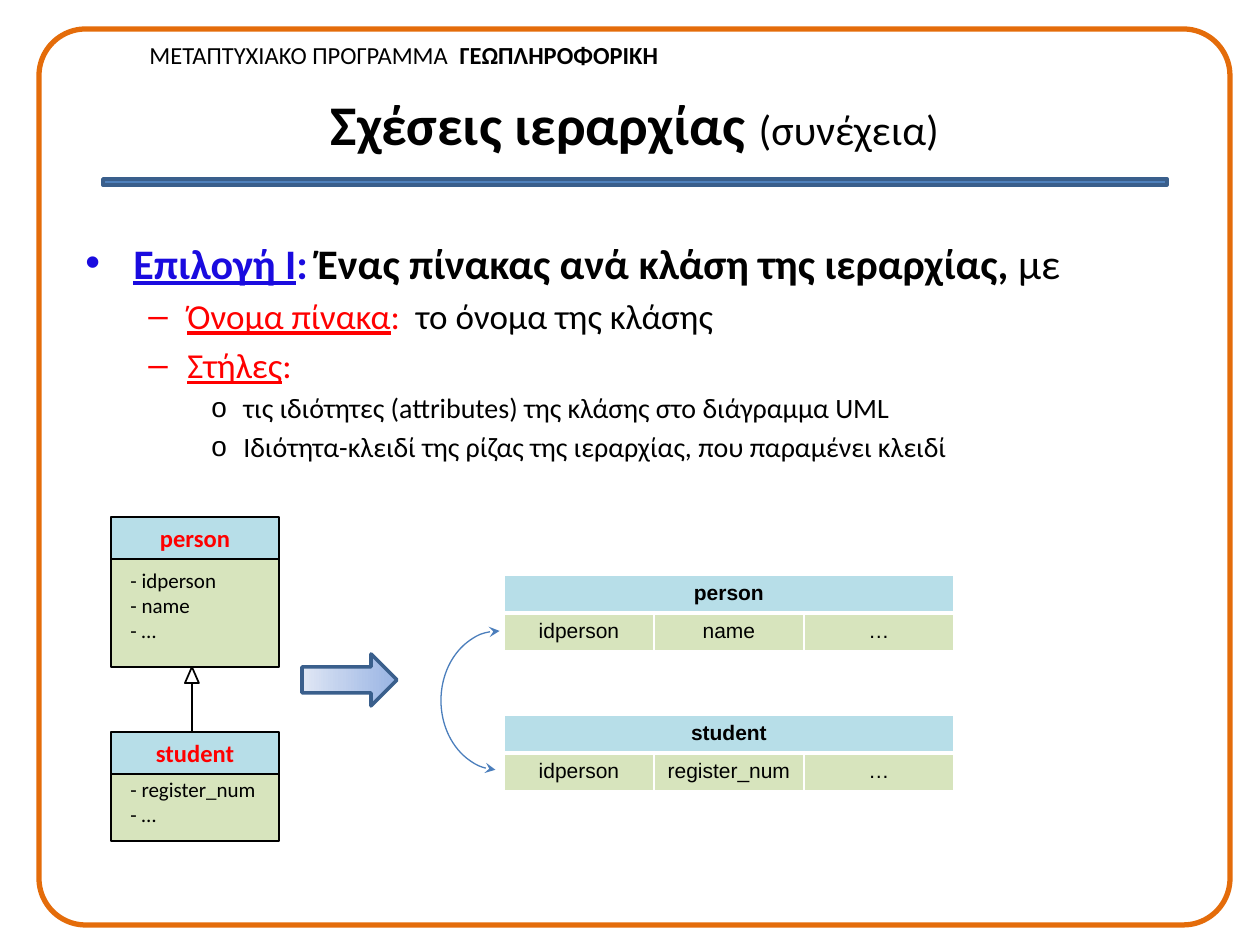
from copy import deepcopy

from lxml.etree import SubElement
from pptx import Presentation
from pptx.dml.color import RGBColor
from pptx.enum.shapes import MSO_CONNECTOR as Link, MSO_SHAPE as Shape
from pptx.enum.text import MSO_ANCHOR as Anchor, MSO_AUTO_SIZE as Fit, PP_ALIGN as Align
from pptx.oxml.ns import qn
from pptx.util import Pt

BLACK, WHITE, RED, BLUE = "000000", "FFFFFF", "FF0000", "1A0BDF"
AQUA, GREEN, NAVY = "B7DEE8", "D7E4BD", "3A5F8C"

PROGRAMME = [("ΜΕΤΑΠΤΥΧΙΑΚΟ ΠΡΟΓΡΑΜΜΑ  ", {"size": 14}), ("ΓΕΩΠΛΗΡΟΦΟΡΙΚΗ", {"size": 14, "bold": True})]
TITLE = [("Σχέσεις ιεραρχίας ", {"size": 32, "bold": True}), ("(συνέχεια)", {"size": 24, "bold": False})]
OUTLINE = [
    (0, [("Επιλογή Ι", {"bold": True, "underline": True, "color": BLUE}),
         (": ", {"bold": True, "color": BLUE}),
         ("Ένας πίνακας ανά κλάση της ιεραρχίας, ", {"bold": True}),
         ("με", {})]),
    (1, [("Όνομα πίνακα", {"underline": True, "color": RED}),
         (":  ", {"color": RED}),
         ("το όνομα της κλάσης", {})]),
    (1, [("Στήλες", {"underline": True, "color": RED}), (":", {"color": RED})]),
    (2, [("τις ιδιότητες (attributes) της κλάσης στο διάγραμμα UML", {})]),
    (2, [("Ιδιότητα-κλειδί της ρίζας της ιεραρχίας, που παραμένει κλειδί", {})]),
]
LEVELS = [
    {"size": 24, "bullet": "•", "indent": 48, "hanging": 48, "before": 5},
    {"size": 20, "bullet": "–", "indent": 102, "hanging": 39, "before": 4},
    {"size": 16, "bullet": "o", "indent": 158, "hanging": 32, "before": 3},
]
CLASSES = [
    {"name": "student", "top": 732, "body": 67, "attributes": ["- register_num", "- …"],
     "text": (118, 770, 151, 63)},
    {"name": "person", "top": 517, "body": 108, "attributes": ["- idperson", "- name", "- …"],
     "text": (118, 561, 112, 89)},
]
CLASS_LEFT, CLASS_WIDTH, HEADER = 111, 168, 42
TABLES = [
    ("person", 575, ["idperson", "name", "…"]),
    ("student", 715, ["idperson", "register_num", "…"]),
]
TABLE_LEFT, COLUMN, ROW = 504, 150, 38
ARROW_STOPS = [(0.02, "9AB5E4"), (0.6, "C2D1ED"), (1, "E1E8F5")]


def px(length):
    """Turn pixels into EMU."""
    return round(length * 914400 / 126)


def rgb(color):
    """Turn a hex string into a colour."""
    return RGBColor.from_string(color)


def write(paragraph, pieces, **defaults):
    """Add formatted runs to a paragraph."""
    for text, changes in pieces:
        run = paragraph.add_run()
        run.text = text
        style = {"name": "Calibri", "color": BLACK, **defaults, **changes}
        run.font.color.rgb = rgb(style.pop("color"))
        run.font.size = Pt(style.pop("size"))
        for key, value in style.items():
            setattr(run.font, key, value)


def draw(slide, kind, place, fill=None, line=BLACK, width=1, adjust=()):
    """Add a preset shape without a shadow."""
    shape = slide.shapes.add_shape(kind, *map(px, place))
    shape.shadow.inherit = False
    if fill:
        shape.fill.solid()
        shape.fill.fore_color.rgb = rgb(fill)
    else:
        shape.fill.background()
    shape.line.color.rgb = rgb(line)
    shape.line.width = Pt(width)
    for index, value in enumerate(adjust):
        shape.adjustments[index] = value
    return shape


def label(slide, place, lines, **defaults):
    """Add an unwrapped text box with one paragraph per line."""
    frame = slide.shapes.add_textbox(*map(px, place)).text_frame
    frame.word_wrap = False
    frame.auto_size = Fit.SHAPE_TO_FIT_TEXT
    for index, pieces in enumerate(lines):
        write(frame.add_paragraph() if index else frame.paragraphs[0], pieces, **defaults)


def add_outline(slide):
    """Add the bulleted outline."""
    frame = slide.shapes.add_textbox(*map(px, (73, 231, 1134, 283))).text_frame
    frame.word_wrap = True
    for index, (depth, pieces) in enumerate(OUTLINE):
        level = LEVELS[depth]
        paragraph = frame.add_paragraph() if index else frame.paragraphs[0]
        paragraph.level = depth
        if index:
            paragraph.space_before = Pt(level["before"])
        properties = paragraph._p.get_or_add_pPr()
        properties.set("marL", str(px(level["indent"])))
        properties.set("indent", str(-px(level["hanging"])))
        tint = SubElement(properties, qn("a:buClr"))
        SubElement(tint, qn("a:srgbClr"), val=pieces[0][1].get("color", BLACK))
        SubElement(properties, qn("a:buFont"), typeface="Arial")
        SubElement(properties, qn("a:buChar"), char=level["bullet"])
        write(paragraph, pieces, size=level["size"])


def add_class(slide, name, top, body, attributes, text):
    """Add a class box with its attributes."""
    header = draw(slide, Shape.RECTANGLE, (CLASS_LEFT, top, CLASS_WIDTH, HEADER), AQUA)
    header.text_frame.vertical_anchor = Anchor.MIDDLE
    caption = header.text_frame.paragraphs[0]
    caption.alignment = Align.CENTER
    write(caption, [(name, {"bold": True, "color": RED})], size=14)
    draw(slide, Shape.RECTANGLE, (CLASS_LEFT, top + HEADER, CLASS_WIDTH, body), GREEN)
    label(slide, text, [[(attribute, {})] for attribute in attributes], size=12)


def fill_cell(cell, text, fill, bold, bottom):
    """Write, border and fill one table cell."""
    paragraph = cell.text_frame.paragraphs[0]
    paragraph.alignment = Align.CENTER
    if text:
        write(paragraph, [(text, {"bold": bold})], size=12, name="Arial")
    properties = cell._tc.get_or_add_tcPr()
    for side, width in {"L": 1, "R": 1, "T": 1, "B": bottom}.items():
        border = SubElement(properties, qn(f"a:ln{side}"), w=str(Pt(width)))
        SubElement(SubElement(border, qn("a:solidFill")), qn("a:srgbClr"), val=WHITE)
    cell.fill.solid()
    cell.fill.fore_color.rgb = rgb(fill)


def add_relation(slide, name, top, fields):
    """Add a relation as a table with a merged heading."""
    count = len(fields)
    place = (TABLE_LEFT, top, COLUMN * count, ROW * 2)
    table = slide.shapes.add_table(2, count, *map(px, place)).table
    for index, field in enumerate(fields):
        fill_cell(table.cell(0, index), "" if index else name, AQUA, True, 3)
        fill_cell(table.cell(1, index), field, GREEN, False, 1)
    table.cell(0, 0).merge(table.cell(0, count - 1))


def add_inheritance(slide):
    """Add the line and hollow triangle from student to person."""
    stem = slide.shapes.add_connector(Link.STRAIGHT, *map(px, (192, 683, 192, 732)))
    stem.line.color.rgb = rgb(BLACK)
    stem.line.width = Pt(1)
    SubElement(stem._element.spPr, qn("a:effectLst"))
    draw(slide, Shape.ISOSCELES_TRIANGLE, (185, 667, 14, 16))


def add_block_arrow(slide):
    """Add the gradient arrow between classes and tables."""
    arrow = draw(slide, Shape.RIGHT_ARROW, (302, 654, 95, 52), line=NAVY, width=2)
    arrow.fill.gradient()
    arrow.fill.gradient_angle = 180
    stops = arrow._element.spPr.find(qn("a:gradFill")).find(qn("a:gsLst"))
    stops.append(deepcopy(stops[0]))
    for stop, (position, color) in zip(arrow.fill.gradient_stops, ARROW_STOPS):
        stop.position = position
        stop.color.rgb = rgb(color)


def add_key_link(slide):
    """Add the double-headed arc joining the two keys."""
    arc = draw(slide, Shape.ARC, (441, 631, 116, 139), line="4B7EBC", width=0.75,
               adjust=(55.734, 162.32))
    for end in ("headEnd", "tailEnd"):
        SubElement(arc.line._get_or_add_ln(), qn(f"a:{end}"), type="stealth")


def main():
    """Build the slide."""
    deck = Presentation()
    deck.slide_width, deck.slide_height = px(1260), px(945)
    slide = deck.slides.add_slide(deck.slide_layouts[5])
    label(slide, (137, 34, 539, 43), [PROGRAMME])
    draw(slide, Shape.RECTANGLE, (103, 179, 1064, 6), "4F81BD", NAVY, 2)
    draw(slide, Shape.ROUNDED_RECTANGLE, (39, 29, 1191, 896), None, "E46C0A", 3, (0.052,))
    title = slide.shapes.title
    title.left, title.top, title.width, title.height = map(px, (68, 63, 1134, 120))
    title.text_frame.vertical_anchor = Anchor.MIDDLE
    title.text_frame.paragraphs[0].alignment = Align.CENTER
    write(title.text_frame.paragraphs[0], TITLE)
    add_outline(slide)
    for entity in CLASSES:
        add_class(slide, **entity)
    add_inheritance(slide)
    add_block_arrow(slide)
    for relation in TABLES:
        add_relation(slide, *relation)
    add_key_link(slide)
    deck.save("out.pptx")


if __name__ == "__main__":
    main()
